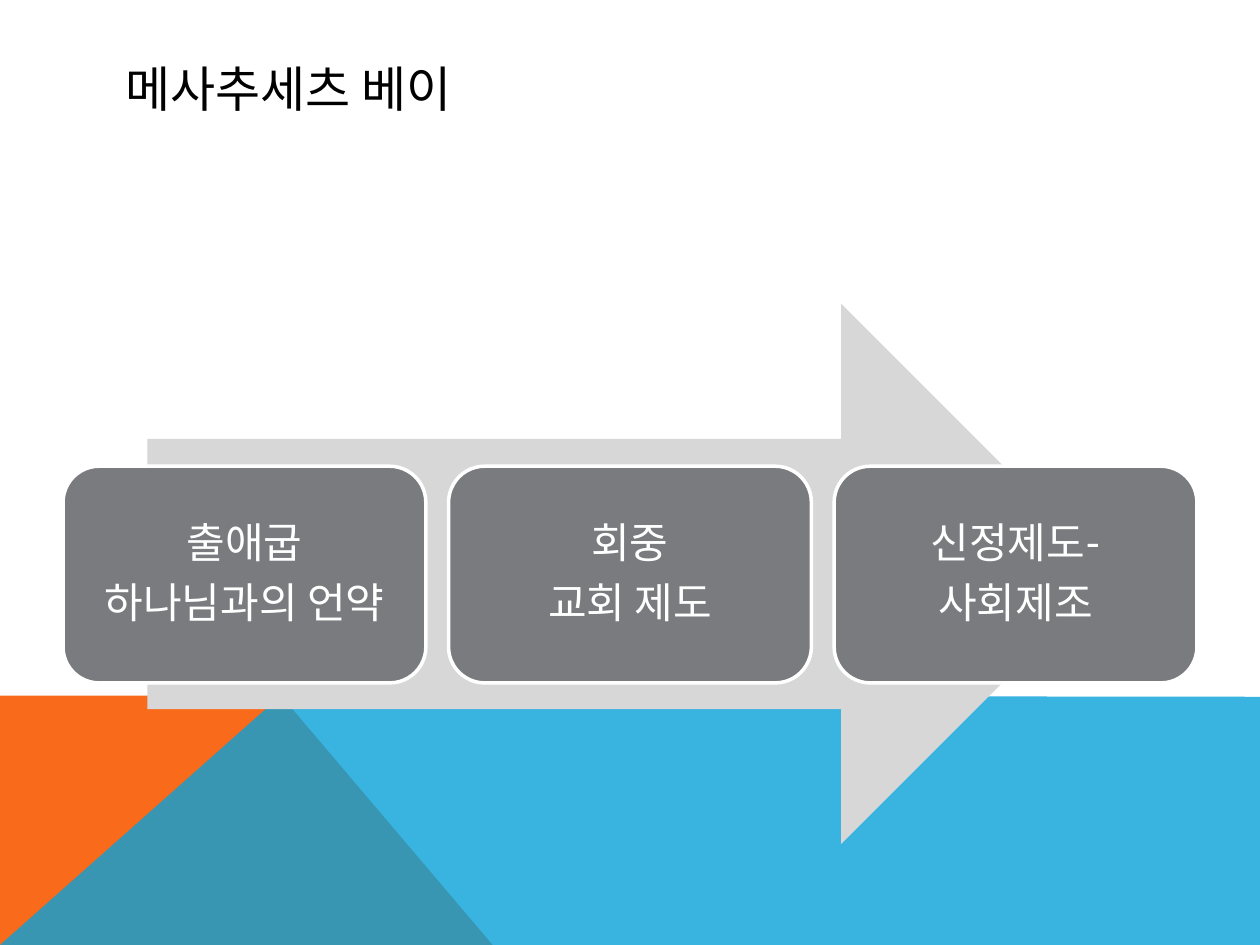
from pptx import Presentation
from pptx.dml.color import RGBColor
from pptx.enum.shapes import MSO_SHAPE
from pptx.enum.text import MSO_ANCHOR, PP_ALIGN
from pptx.oxml.ns import qn
from pptx.util import Inches, Pt
from lxml.etree import SubElement


def paint(sp, color, line=None, alpha=None):
    sp.shadow.inherit = False
    sp.fill.solid()
    sp.fill.fore_color.rgb = RGBColor.from_string(color)
    if alpha:
        clr = sp._element.spPr.find(qn("a:solidFill"))[0]
        SubElement(clr, qn("a:alpha")).set("val", str(alpha * 1000))
    if line:
        sp.line.color.rgb = RGBColor.from_string(line)
        sp.line.width = Pt(2)
    else:
        sp.line.fill.background()


def write(sp, lines, size=24, color="FFFFFF", align=PP_ALIGN.CENTER,
          spacing=None, after=0, inset=0.1):
    tf = sp.text_frame
    tf.word_wrap = True
    tf.vertical_anchor = MSO_ANCHOR.MIDDLE
    tf.margin_left = tf.margin_right = Inches(0.1)
    tf.margin_top = tf.margin_bottom = Inches(inset)
    for i, text in enumerate(lines):
        p = tf.add_paragraph() if i else tf.paragraphs[0]
        p.alignment = align
        p.line_spacing = spacing
        p.space_after = Pt(after)
        r = p.add_run()
        r.text = text
        r.font.size = Pt(size)
        r.font.name = "Lato"
        r.font.color.rgb = RGBColor.from_string(color)


prs = Presentation()
prs.slide_width, prs.slide_height = Inches(10), Inches(7.5)
slide = prs.slides.add_slide(prs.slide_layouts[6])
shapes = slide.shapes

# Coloured footer: orange triangle under a translucent blue band
footer = [
    ([(0, 7.5), (0, 5.52), (2.23, 5.52), (3.91, 7.5)], "F96A1B", None),
    ([(0, 7.5), (2.23, 5.52), (10, 5.53), (10, 7.5)], "08A1D9", 80),
]
for points, color, alpha in footer:
    points = [(Inches(x), Inches(y)) for x, y in points]
    builder = shapes.build_freeform(*points[0], scale=1.0)
    builder.add_line_segments(points[1:], close=True)
    paint(builder.convert_to_shape(), color, alpha=alpha)

# Title
title = shapes.add_textbox(Inches(0.9), Inches(0.4), Inches(8.22), Inches(0.6))
write(title, ["메사추세츠 베이"], size=28, color="000000",
      align=PP_ALIGN.LEFT, inset=0.05)

# Process arrow
arrow = shapes.add_shape(MSO_SHAPE.RIGHT_ARROW, Inches(1.17), Inches(2.41),
                         Inches(7.65), Inches(4.29))
paint(arrow, "D7D7D8")

# Three steps, evenly spaced
steps = [
    ["출애굽", "하나님과의 언약"],
    ["회중", "교회 제도"],
    ["신정제도-", "사회제조"],
]
for i, lines in enumerate(steps):
    sp = shapes.add_shape(MSO_SHAPE.ROUNDED_RECTANGLE, Inches(0.5 + 3.06 * i),
                          Inches(3.7), Inches(2.88), Inches(1.72))
    paint(sp, "797B7E", line="FFFFFF")
    write(sp, lines, spacing=0.9, after=8.4)

prs.save("out.pptx")
